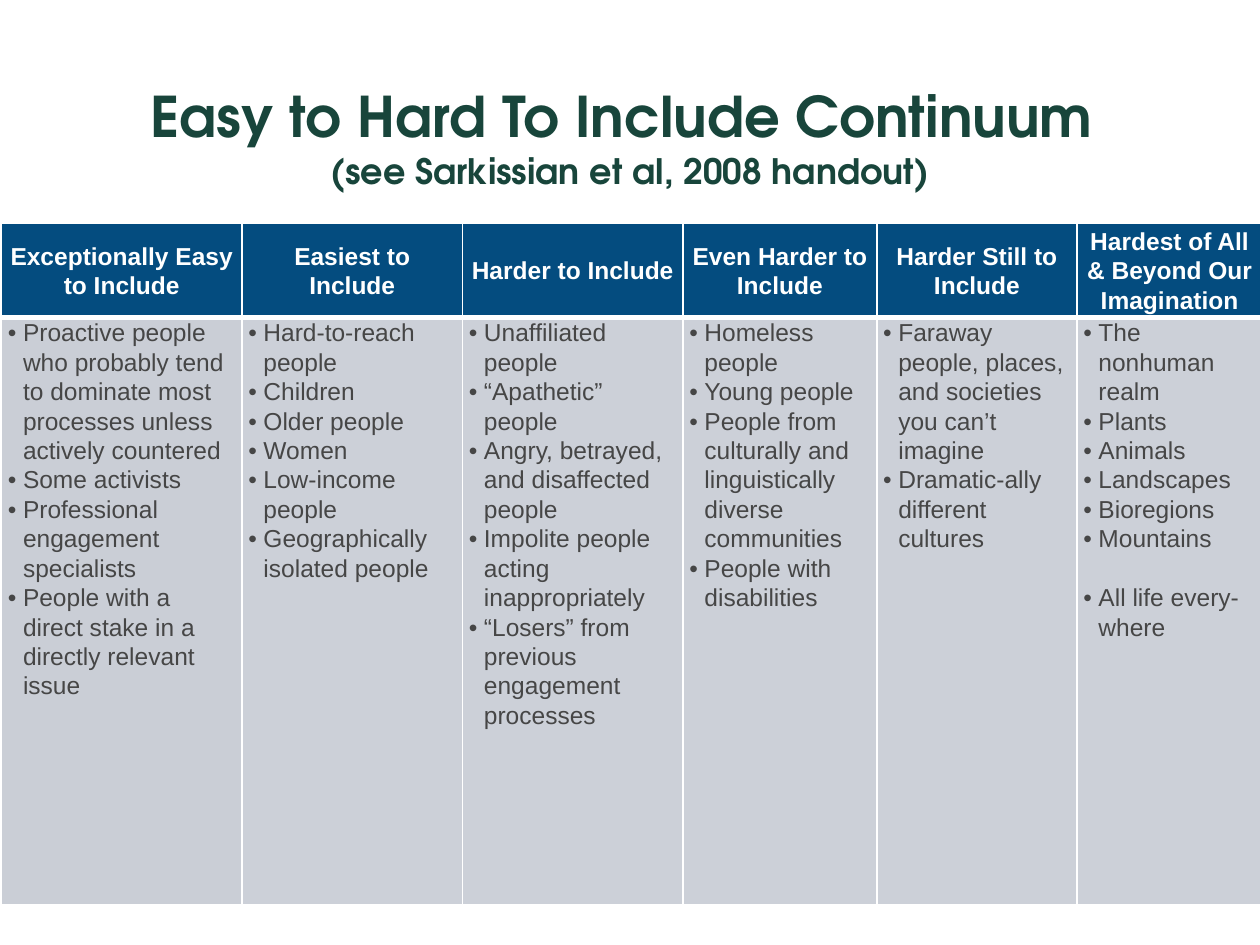
from lxml import etree
from pptx import Presentation
from pptx.dml.color import RGBColor
from pptx.enum.text import MSO_ANCHOR, PP_ALIGN
from pptx.oxml.ns import qn
from pptx.util import Pt

MIDDLE = MSO_ANCHOR.MIDDLE
TOP = MSO_ANCHOR.TOP
CENTER = PP_ALIGN.CENTER

COLORS = {
    "title": "18453B",
    "header": "044C7F",
    "first_column": "CACED6",
    "body": "CCD0D8",
    "text": "464646",
    "white": "FFFFFF",
}

COLUMNS = [
    (137.4, "Exceptionally Easy to Include", [
        "Proactive people who probably tend to dominate most processes unless actively countered",
        "Some activists",
        "Professional engagement specialists",
        "People with a direct stake in a directly relevant issue",
    ]),
    (126, "Easiest to Include", [
        "Hard-to-reach people",
        "Children",
        "Older people",
        "Women",
        "Low-income people",
        "Geographically isolated people",
    ]),
    (126, "Harder to Include", [
        "Unaffiliated people",
        "“Apathetic” people",
        "Angry, betrayed, and disaffected people",
        "Impolite people acting inappropriately",
        "“Losers” from previous engagement processes",
    ]),
    (110.8, "Even Harder to Include", [
        "Homeless people",
        "Young people",
        "People from culturally and linguistically diverse communities",
        "People with disabilities",
    ]),
    (114.4, "Harder Still to Include", [
        "Faraway people, places, and societies you can’t imagine",
        "Dramatic-ally different cultures",
    ]),
    (105.8, "Hardest of All & Beyond Our Imagination", [
        "The nonhuman realm",
        "Plants",
        "Animals",
        "Landscapes",
        "Bioregions",
        "Mountains",
        "All life every-where",
    ]),
]
SET_APART = "All life every-where"


class SlideBuilder:
    title_font = "TeX Gyre Adventor"
    table_font = "Arial"
    table_size = 14
    line_spacing = 1.07
    blank_line = 16.8
    bullet_indent = 8.64
    cell_margin = 3.6
    thin_line = 1
    thick_line = 3

    def __init__(self, slide):
        self.slide = slide

    def style(self, font, name, size, color, bold):
        font.name = name
        font.size = Pt(size)
        font.bold = bold
        font.color.rgb = RGBColor.from_string(COLORS[color])

    def title(self, heading, source, left, top, width, height):
        box = self.slide.shapes.add_textbox(Pt(left), Pt(top), Pt(width), Pt(height))
        frame = box.text_frame
        frame.word_wrap = True
        frame.vertical_anchor = MIDDLE
        frame.text = f"{heading} \v{source}"
        para = frame.paragraphs[0]
        para.alignment = CENTER
        for span, size in zip(para.runs, (32, 20)):
            self.style(span.font, self.title_font, size, "title", True)

    def borders(self, cell, top, bottom):
        properties = cell._tc.get_or_add_tcPr()
        widths = {"L": self.thin_line, "R": self.thin_line, "T": top, "B": bottom}
        for side, width in widths.items():
            line = etree.SubElement(properties, qn(f"a:ln{side}"), w=str(Pt(width)))
            fill = etree.SubElement(line, qn("a:solidFill"))
            etree.SubElement(fill, qn("a:srgbClr"), val=COLORS["white"])

    def cell(self, cell, lines, fill, color, header):
        if header:
            self.borders(cell, self.thin_line, self.thick_line)
        else:
            self.borders(cell, self.thick_line, self.thin_line)
        cell.fill.solid()
        cell.fill.fore_color.rgb = RGBColor.from_string(COLORS[fill])
        cell.margin_left = cell.margin_right = Pt(self.cell_margin)
        cell.margin_top = cell.margin_bottom = 0
        cell.vertical_anchor = MIDDLE if header else TOP
        cell.text_frame.text = "\n".join(lines)
        for para in cell.text_frame.paragraphs:
            para.line_spacing = self.line_spacing
            if header:
                para.alignment = CENTER
            else:
                self.bullet(para)
            if para.text == SET_APART:
                para.space_before = Pt(self.blank_line)
            for span in para.runs:
                self.style(span.font, self.table_font, self.table_size, color, header)

    def bullet(self, para):
        properties = para._p.get_or_add_pPr()
        properties.set("marL", str(Pt(self.bullet_indent)))
        properties.set("indent", str(-Pt(self.bullet_indent)))
        etree.SubElement(properties, qn("a:buFont"), typeface=self.table_font)
        etree.SubElement(properties, qn("a:buChar"), char="•")

    def table(self, columns, left, top, row_heights):
        width = sum(column[0] for column in columns)
        table = self.slide.shapes.add_table(
            len(row_heights), len(columns),
            Pt(left), Pt(top), Pt(width), Pt(sum(row_heights)),
        ).table
        for row, height in zip(table.rows, row_heights):
            row.height = Pt(height)
        for index, (column_width, heading, groups) in enumerate(columns):
            table.columns[index].width = Pt(column_width)
            fill = "body" if index else "first_column"
            self.cell(table.cell(0, index), [heading], "header", "white", True)
            self.cell(table.cell(1, index), groups, fill, "text", False)


def main():
    deck = Presentation()
    deck.slide_width = Pt(720)
    deck.slide_height = Pt(540)
    page = SlideBuilder(deck.slides.add_slide(deck.slide_layouts[6]))
    page.title("Easy to Hard To Include Continuum", "(see Sarkissian et al, 2008 handout)",
               36, 42, 648, 72)
    page.table(COLUMNS, 0.9, 127.6, (53, 335.6))
    deck.save("out.pptx")


if __name__ == "__main__":
    main()
